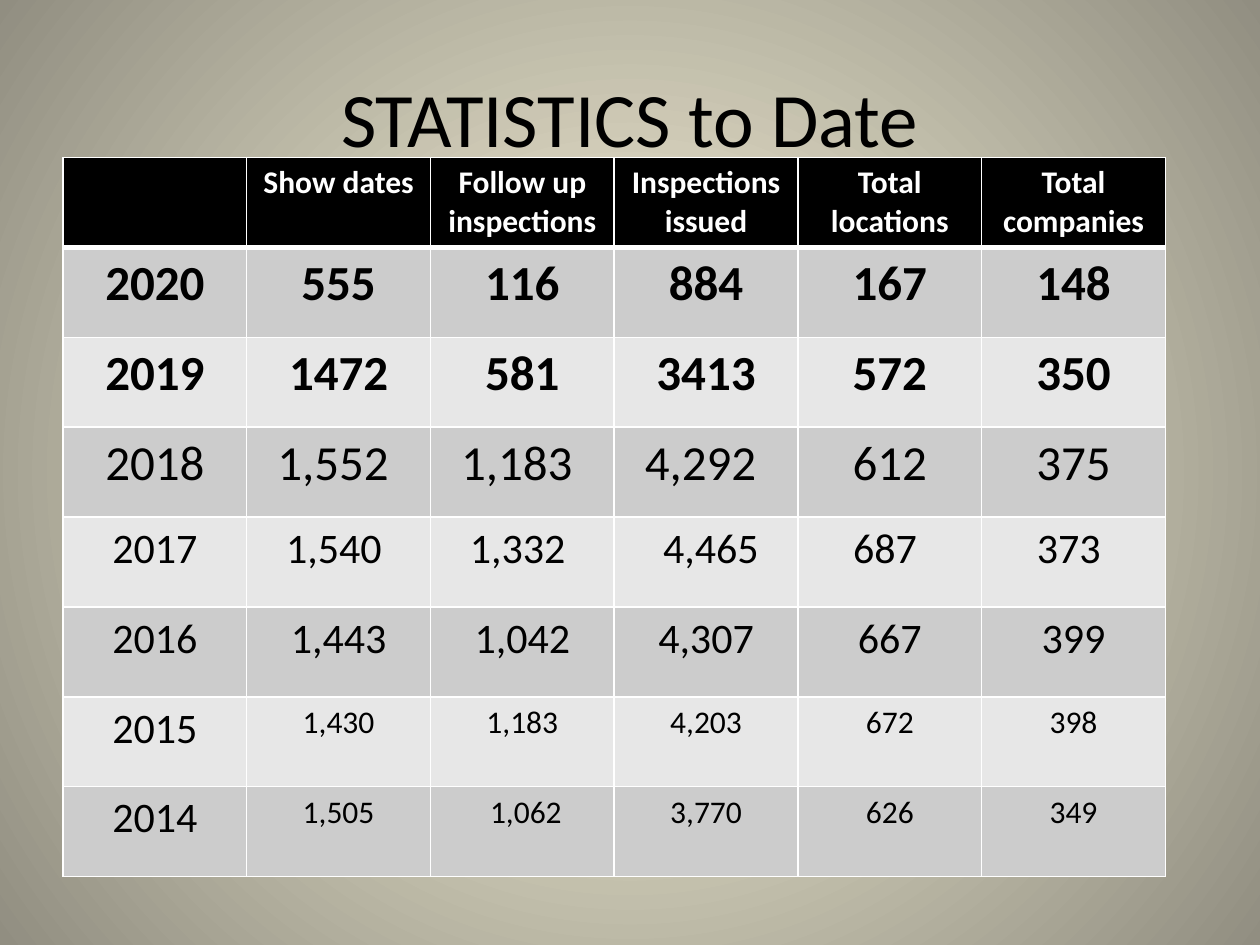
import pptx
import pptx.util
import pptx.dml.color
import pptx.enum.text
import pptx.oxml
import pptx.oxml.ns

FONT = "Calibri"
COLORS = {
    "glow": "FCF7DD", "edge": "918E81", "ink": "000000", "rule": "FFFFFF",
    "header": "000000", "header_text": "FFFFFF",
    "dark_band": "CCCCCC", "light_band": "E7E7E7",
}
HEADINGS = ["", "Show dates", "Follow up inspections", "Inspections issued",
            "Total locations", "Total companies"]
# Year row, size of the year, size of the figures, bold
YEARS = [
    (["2020", "555", "116", "884", "167", "148"], 28, 28, True),
    (["2019", "1472", "581", "3413", "572", "350"], 28, 28, True),
    (["2018", "1,552 ", "1,183 ", "4,292 ", "612", "375"], 28, 28, False),
    (["2017", "1,540 ", "1,332 ", " 4,465", "687 ", "373 "], 24, 24, False),
    (["2016", "1,443", "1,042", "4,307", "667", "399"], 24, 24, False),
    (["2015", "1,430", "1,183", "4,203", "672", "398"], 24, 18, False),
    (["2014", "1,505", " 1,062", "3,770", "626", "349"], 24, 18, False),
]


def rgb(name):
    return pptx.dml.color.RGBColor.from_string(COLORS[name])


def paint_background(slide):
    fill = slide.background.fill
    fill.gradient()
    for stop, name in zip(fill.gradient_stops, ("glow", "edge")):
        stop.color.rgb = rgb(name)
    # Turn the linear gradient into a circular one from the centre
    linear = slide.background._cSld.find(".//" + pptx.oxml.ns.qn("a:lin"))
    circle = pptx.oxml.parse_xml(
        f'<a:path {pptx.oxml.ns.nsdecls("a")} path="circle">'
        '<a:fillToRect l="50000" t="50000" r="50000" b="50000"/></a:path>')
    linear.getparent().replace(linear, circle)


def write(frame, text, size, color, bold=False):
    paragraph = frame.paragraphs[0]
    paragraph.alignment = pptx.enum.text.PP_ALIGN.CENTER
    if text:
        run = paragraph.add_run()
        run.text = text
        run.font.name = FONT
        run.font.size = pptx.util.Pt(size)
        run.font.bold = bold
        run.font.color.rgb = rgb(color)


def add_title(slide, text):
    title = slide.shapes.title
    title.left, title.top = pptx.util.Inches(0.5), pptx.util.Inches(0.3)
    title.width, title.height = pptx.util.Inches(9), pptx.util.Inches(1.25)
    title.text_frame.vertical_anchor = pptx.enum.text.MSO_ANCHOR.MIDDLE
    write(title.text_frame, text, 44, "ink")


def rule_cell(cell, top, bottom):
    properties = cell._tc.get_or_add_tcPr()
    widths = {"lnL": 1, "lnR": 1, "lnT": top, "lnB": bottom}
    for place, (tag, points) in enumerate(widths.items()):
        properties.insert(place, pptx.oxml.parse_xml(
            f'<a:{tag} {pptx.oxml.ns.nsdecls("a")} w="{pptx.util.Pt(points)}">'
            f'<a:solidFill><a:srgbClr val="{COLORS["rule"]}"/></a:solidFill>'
            f'</a:{tag}>'))


def fill_cell(cell, band, top=1, bottom=1):
    cell.fill.solid()
    cell.fill.fore_color.rgb = rgb(band)
    rule_cell(cell, top, bottom)


def add_statistics(slide):
    table = slide.shapes.add_table(
        len(YEARS) + 1, len(HEADINGS),
        pptx.util.Inches(0.5), pptx.util.Inches(1.25),
        pptx.util.Inches(8.75), pptx.util.Inches(5.71)).table

    # Header, set off by a heavier rule
    for column, heading in enumerate(HEADINGS):
        cell = table.cell(0, column)
        fill_cell(cell, "header", bottom=3)
        write(cell.text_frame, heading, 18, "header_text", bold=True)

    # One banded row per year
    for row, (values, year_size, figure_size, bold) in enumerate(YEARS, 1):
        band = "dark_band" if row % 2 else "light_band"
        for column, value in enumerate(values):
            cell = table.cell(row, column)
            fill_cell(cell, band, top=3 if row == 1 else 1)
            size = figure_size if column else year_size
            write(cell.text_frame, value, size, "ink", bold)


def main():
    deck = pptx.Presentation()
    deck.slide_width = pptx.util.Inches(10)
    deck.slide_height = pptx.util.Inches(7.5)
    slide = deck.slides.add_slide(deck.slide_layouts.get_by_name("Title Only"))
    paint_background(slide)
    add_title(slide, "STATISTICS to Date")
    add_statistics(slide)
    deck.save("out.pptx")


if __name__ == "__main__":
    main()
